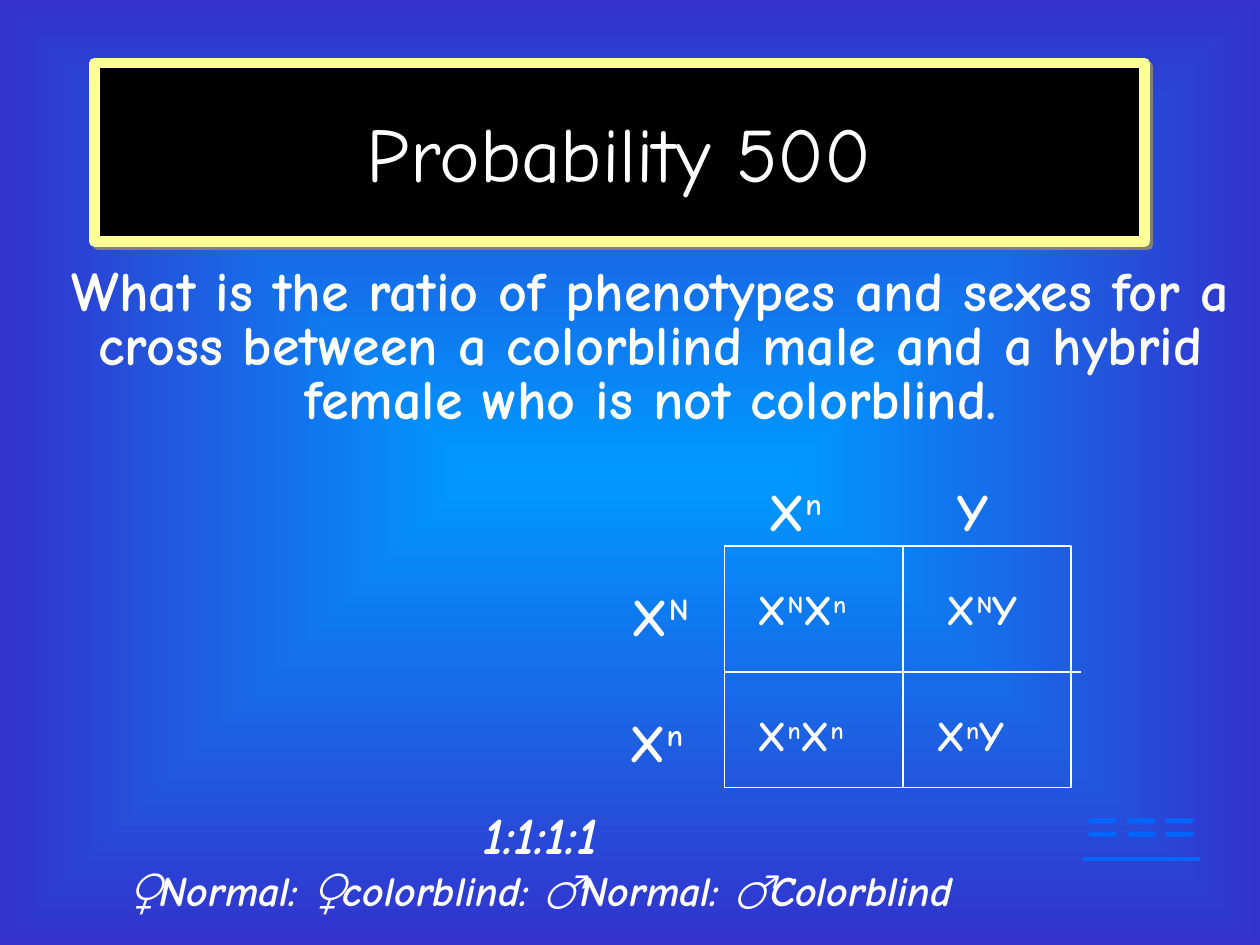
from lxml import etree
from pptx import Presentation
from pptx.dml.color import RGBColor
from pptx.enum import shapes, text
from pptx.oxml import ns
from pptx.util import Pt

FONT = "Comic Neue"
HUES = {
    "core": "0099FF", "edge": "3333CC", "black": "000000", "cream": "FFFF99",
    "shade": "808080", "white": "FFFFFF", "link": "0066FF",
}
LEFT, MID = text.PP_ALIGN.LEFT, text.PP_ALIGN.CENTER


def hue(name):
    return RGBColor.from_string(HUES[name])


def add_xml(parent, tag, **attrs):
    return etree.SubElement(parent, ns.qn(tag), attrs)


def style(para, size, align=LEFT, color="white", bold=False, italic=False):
    para.alignment = align
    for run in para.runs:
        font = run.font
        font.name, font.size = FONT, Pt(size)
        font.bold, font.italic = bold, italic
        font.color.rgb = hue(color)


def add_box(parent, box, wrap=True):
    frame = parent.add_textbox(*map(Pt, box)).text_frame
    frame.word_wrap = wrap
    return frame


def paint_back(slide):
    fill = slide.background.fill
    fill.gradient()
    for stop, name in zip(fill.gradient_stops, ("core", "edge")):
        stop.color.rgb = hue(name)
    lin = next(slide.element.iter(ns.qn("a:lin")))
    grad = lin.getparent()
    grad.remove(lin)
    shade = add_xml(grad, "a:path", path="shape")
    add_xml(shade, "a:fillToRect", l="50000", t="50000", r="50000", b="50000")


def add_title(slide, box, words):
    shape = slide.shapes.add_shape(shapes.MSO_SHAPE.RECTANGLE, *map(Pt, box))
    shape.fill.solid()
    shape.fill.fore_color.rgb = hue("black")
    shape.line.color.rgb = hue("cream")
    shape.line.width = Pt(6)
    shape.shadow.inherit = False
    effects = shape.element.spPr.find(ns.qn("a:effectLst"))
    shadow = add_xml(effects, "a:outerShdw", dist=str(Pt(2.8)), dir="2700000",
                     algn="ctr", rotWithShape="0")
    add_xml(shadow, "a:srgbClr", val=HUES["shade"])
    frame = shape.text_frame
    frame.word_wrap = True
    frame.vertical_anchor = text.MSO_ANCHOR.MIDDLE
    frame.text = words
    style(frame.paragraphs[0], 44, MID)


def add_body(slide, box, words):
    frame = add_box(slide.shapes, box)
    frame.text = words
    para = frame.paragraphs[0]
    para.line_spacing = 0.8
    style(para, 32, MID, bold=True)


def add_answer(slide, box, ratio, key):
    frame = add_box(slide.shapes, box)
    frame.text = f"{ratio}\n{key}"
    for para, size in zip(frame.paragraphs, (30, 24)):
        style(para, size, MID, bold=True, italic=True)


def add_mark(slide, box, words):
    frame = add_box(slide.shapes, box, wrap=False)
    frame.text = words
    para = frame.paragraphs[0]
    style(para, 48, color="link")
    para.runs[0].font.underline = True


def add_gene(parent, box, gene, size, align=LEFT):
    para = add_box(parent, box).paragraphs[0]
    for mark in gene:
        run = para.add_run()
        run.text = mark
        if mark in "Nn":
            run._r.get_or_add_rPr().set("baseline", "30000")
    style(para, size, align, bold=True)


def add_rule(parent, *ends):
    rule = parent.add_connector(shapes.MSO_CONNECTOR.STRAIGHT, *map(Pt, ends))
    rule.line.color.rgb = hue("white")
    rule.line.width = Pt(0.75)
    add_xml(rule.element.spPr, "a:effectLst")


def add_square(slide, box):
    left, top, width, height = box
    group = slide.shapes.add_group_shape().shapes
    frame = group.add_shape(shapes.MSO_SHAPE.RECTANGLE, *map(Pt, box))
    frame.fill.background()
    frame.line.color.rgb = hue("white")
    frame.line.width = Pt(0.75)
    frame.shadow.inherit = False
    add_rule(group, left + 102, top, left + 102, top + height)
    add_rule(group, left, top + 72, left + width + 6, top + 72)
    genes = [
        ("XN", -60, 18, 54, 30, LEFT),
        ("Xn", -66, 90, 54, 30, MID),
        ("Xn", 18, -42, 66, 30, LEFT),
        ("Y", 126, -42, 60, 30, LEFT),
        ("XNXn", 12, 18, 84, 24, LEFT),
        ("XNY", 120, 18, 84, 24, LEFT),
        ("XnXn", 12, 90, 84, 24, LEFT),
        ("XnY", 114, 90, 66, 24, LEFT),
    ]
    for gene, x, y, wide, size, align in genes:
        spot = (left + x, top + y, wide, size * 1.2 + 7.2)
        add_gene(group, spot, gene, size, align)


def main():
    deck = Presentation()
    deck.slide_width, deck.slide_height = Pt(720), Pt(540)
    slide = deck.slides.add_slide(deck.slide_layouts[6])
    paint_back(slide)
    add_title(slide, (54, 36, 600, 102), "Probability 500")
    add_mark(slide, (612, 433.5, 88.5, 65.5), "===")
    add_body(slide, (24, 150, 696, 180),
             "What is the ratio of phenotypes and sexes for a cross between "
             "a colorblind male and a hybrid female who is not colorblind.")
    add_answer(slide, (0, 454.5, 618, 72.5), "1:1:1:1",
               "♀Normal: ♀colorblind: ♂Normal: ♂Colorblind")
    add_square(slide, (414, 312, 198, 138))
    deck.save("out.pptx")


if __name__ == "__main__":
    main()
